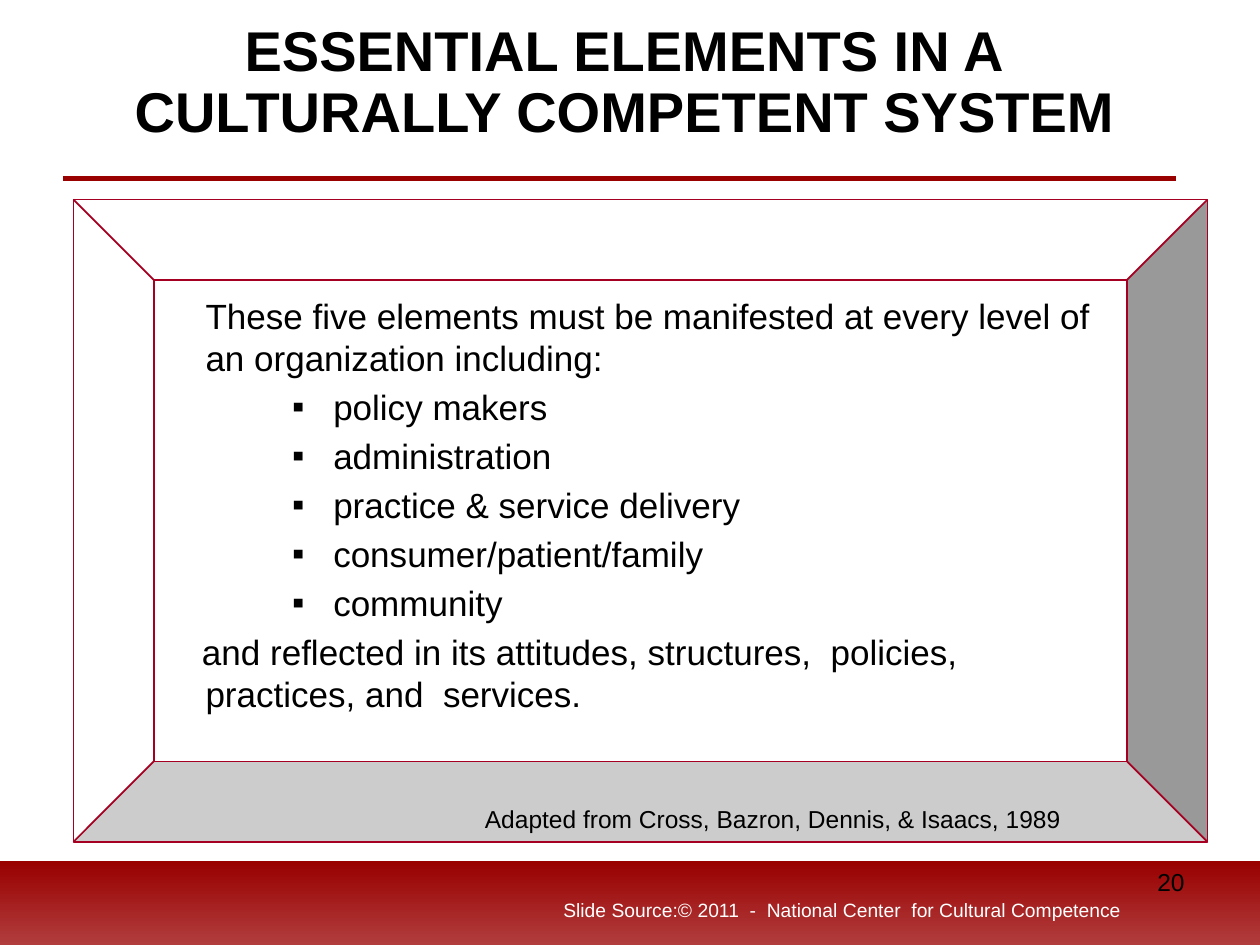
from lxml import etree
from pptx import Presentation
from pptx import util as u
from pptx.dml.color import RGBColor
from pptx.enum import shapes, text
from pptx.oxml.ns import qn

RED = RGBColor(0x99, 0x00, 0x00)
ROSE = RGBColor(0xB1, 0x3D, 0x3D)
WINE = RGBColor(0xA5, 0x00, 0x21)
BLACK = RGBColor(0, 0, 0)
WHITE = RGBColor(0xFF, 0xFF, 0xFF)
LEFT, MID, RIGHT = text.PP_ALIGN.LEFT, text.PP_ALIGN.CENTER, text.PP_ALIGN.RIGHT

INTRO = "These five elements must be manifested at every level of an organization including:"
LEVELS = ["policy makers", "administration", "practice & service delivery",
          "consumer/patient/family", "community"]
CLOSE = "and reflected in its attitudes, structures,  policies, practices, and  services."


def pts(*nums):
    """Turn numbers into point lengths."""
    return [u.Pt(n) for n in nums]


def add_run(para, words, size, color=BLACK, bold=False):
    """Add one styled run."""
    run = para.add_run()
    run.text = words
    font = run.font
    font.name, font.size, font.bold = "Arial", u.Pt(size), bold
    font.color.rgb = color


def add_text(slide, box, lines, size, align=LEFT, color=BLACK, bold=False):
    """Add a text box whose lines share one paragraph."""
    frame = slide.shapes.add_textbox(*pts(*box)).text_frame
    frame.word_wrap = True
    para = frame.paragraphs[0]
    para.alignment = align
    for i, line in enumerate(lines):
        if i:
            para.add_line_break()
        add_run(para, line, size, color, bold)
    return frame


def add_band(slide, box):
    """Add the footer band with its gradient."""
    band = slide.shapes.add_shape(shapes.MSO_SHAPE.RECTANGLE, *pts(*box))
    band.shadow.inherit = False
    band.line.fill.background()
    band.fill.gradient()
    band.fill.gradient_angle = 270
    for stop, color, place in zip(band.fill.gradient_stops, (RED, ROSE), (0, 1)):
        stop.color.rgb = color
        stop.position = place


def add_rule(slide, left, right, top):
    """Add the line below the title."""
    rule = slide.shapes.add_connector(
        shapes.MSO_CONNECTOR.STRAIGHT, *pts(left, top, right, top))
    rule.line.color.rgb = RED
    rule.line.width = u.Pt(3)
    etree.SubElement(rule._element.spPr, qn("a:effectLst"))


def add_para(frame, words, left, hang=0, mark=None):
    """Add an indented paragraph, with a bullet if a mark is given."""
    first = not frame.paragraphs[0].runs
    para = frame.paragraphs[0] if first else frame.add_paragraph()
    para.alignment = LEFT
    if not first:
        para.space_before = u.Pt(4)
    props = para._p.get_or_add_pPr()
    props.set("marL", str(u.Pt(left)))
    props.set("indent", str(u.Pt(-hang)))
    if mark:
        etree.SubElement(props, qn("a:buFont")).set("typeface", "Arial")
        etree.SubElement(props, qn("a:buChar")).set("char", mark)
    else:
        etree.SubElement(props, qn("a:buNone"))
    add_run(para, words, 20)


def add_panel(slide, box):
    """Add the bevelled panel with its list."""
    panel = slide.shapes.add_shape(shapes.MSO_SHAPE.BEVEL, *pts(*box))
    panel.adjustments[0] = 0.125
    panel.shadow.inherit = False
    panel.fill.solid()
    panel.fill.fore_color.rgb = WHITE
    panel.line.color.rgb = WINE
    panel.line.width = u.Pt(1)
    frame = panel.text_frame
    frame.word_wrap = True
    frame.vertical_anchor = text.MSO_ANCHOR.TOP
    frame.margin_top = u.Pt(8.6)
    add_para(frame, INTRO, 22.5)
    for level in LEVELS:
        add_para(frame, level, 95.5, 23.5, "▪")
    add_para(frame, CLOSE, 22.5, 2)


def main():
    """Build the slide and save it."""
    deck = Presentation()
    deck.slide_width, deck.slide_height = pts(720, 540)
    slide = deck.slides.add_slide(deck.slide_layouts[6])
    add_band(slide, (0, 492, 720, 48))
    add_rule(slide, 36, 672, 102)
    title = add_text(slide, (30, -6, 654, 108),
                     ["ESSENTIAL ELEMENTS IN A", "CULTURALLY COMPETENT SYSTEM"],
                     32, MID, bold=True)
    title.vertical_anchor = text.MSO_ANCHOR.MIDDLE
    title.paragraphs[0].line_spacing = 0.9
    add_panel(slide, (42, 114, 648, 367))
    add_text(slide, (270, 456, 384, 24),
             ["Adapted from Cross, Bazron, Dennis, & Isaacs, 1989"], 14)
    add_text(slide, (312, 510, 336, 21),
             ["Slide Source:© 2011  -  National Center  for Cultural Competence"],
             11, RIGHT, WHITE)
    add_text(slide, (516, 492, 168, 37.5), ["20"], 14, RIGHT)
    deck.save("out.pptx")


if __name__ == "__main__":
    main()
